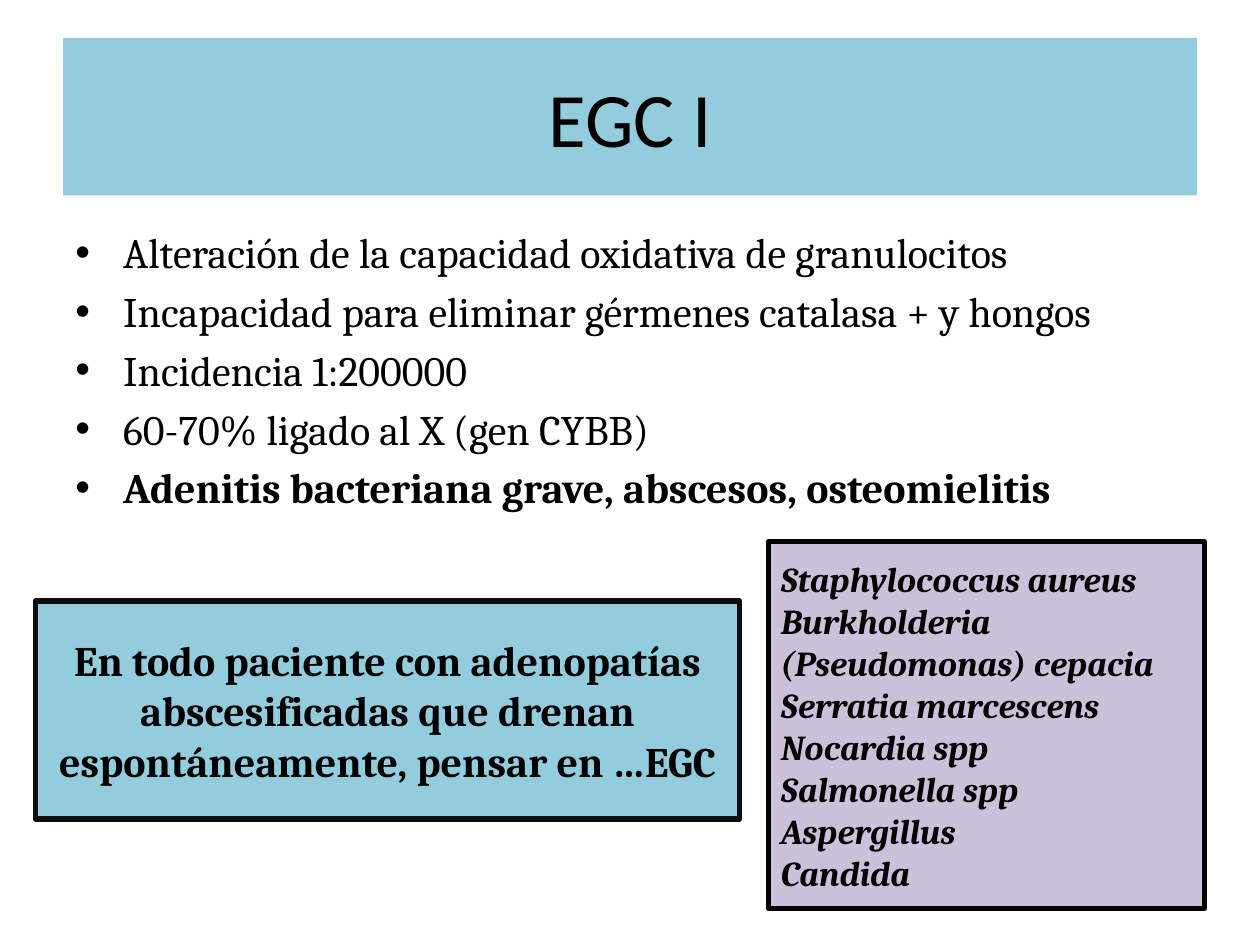
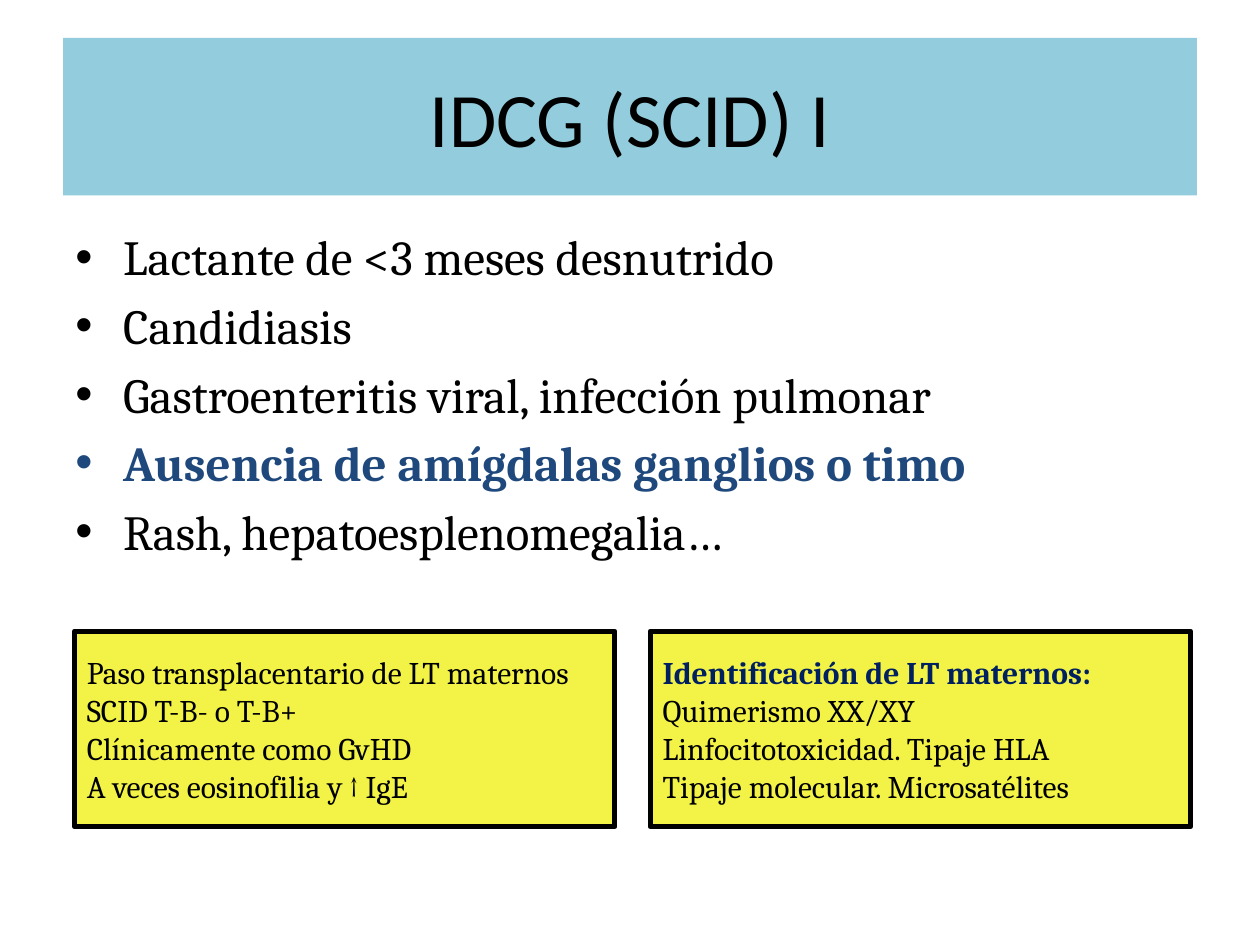
from lxml.etree import SubElement
from pptx import Presentation
from pptx.dml.color import RGBColor
from pptx.enum.shapes import MSO_SHAPE
from pptx.enum.text import MSO_ANCHOR, PP_ALIGN
from pptx.oxml.ns import qn
from pptx.util import Inches, Pt

COLORS = {
    "band": "93CDDD",
    "lilac": "CCC1DA",
    "yellow": "F3F347",
    "ink": "000000",
    "edge": "0D0D0D",
    "blue": "1F497D",
    "navy": "002060",
}
HEAD, BODY = "Calibri", "Cambria"


def rgb(name):
    return RGBColor.from_string(COLORS[name])


def paint(shape, fill):
    shape.fill.solid()
    shape.fill.fore_color.rgb = rgb(fill)


def place(shape, box):
    shape.left, shape.top, shape.width, shape.height = map(Inches, box)


def style(para, size, face=BODY, color="ink", bold=False, italic=False):
    for run in para.runs:
        font = run.font
        font.name, font.size = face, Pt(size)
        font.bold, font.italic = bold, italic
        font.color.rgb = rgb(color)


def write(frame, lines, size, align=PP_ALIGN.LEFT, marks=None, **look):
    """Fill a frame; marks maps a line's index to its special look."""
    frame.word_wrap = True
    frame.text = "\n".join(lines)
    for i, para in enumerate(frame.paragraphs):
        para.alignment = align
        style(para, size, **{**look, **(marks or {}).get(i, {})})


def add_slide(deck, title):
    slide = deck.slides.add_slide(deck.slide_layouts[5])
    head = slide.shapes.title
    place(head, (0.5, 0.3, 9, 1.25))
    paint(head, "band")
    write(head.text_frame, [title], 44, PP_ALIGN.CENTER, face=HEAD)
    head.text_frame.vertical_anchor = MSO_ANCHOR.MIDDLE
    return slide


def add_list(slide, lines, size, marks):
    box = slide.shapes.add_textbox(*map(Inches, (0.5, 1.75, 9, 4.95)))
    write(box.text_frame, lines, size, marks=marks)
    for para in box.text_frame.paragraphs:
        para.space_before = Pt(size * 0.2)
        # Hanging bullet
        props = para._p.get_or_add_pPr()
        props.set("marL", str(Inches(0.38)))
        props.set("indent", str(-Inches(0.38)))
        SubElement(props, qn("a:buFont"), typeface="Arial")
        SubElement(props, qn("a:buChar"), char="•")


def add_note(slide, box, fill, lines, size, edge="ink", **look):
    note = slide.shapes.add_shape(MSO_SHAPE.RECTANGLE, *map(Inches, box))
    note.shadow.inherit = False
    paint(note, fill)
    note.line.color.rgb = rgb(edge)
    note.line.width = Pt(3)
    write(note.text_frame, lines, size, **look)
    note.text_frame.vertical_anchor = MSO_ANCHOR.MIDDLE


def add_egc(deck):
    slide = add_slide(deck, "EGC I")
    add_list(slide, [
        "Alteración de la capacidad oxidativa de granulocitos",
        "Incapacidad para eliminar gérmenes catalasa + y hongos",
        "Incidencia 1:200000",
        "60-70% ligado al X (gen CYBB)",
        "Adenitis bacteriana grave, abscesos, osteomielitis",
    ], 24, {4: {"bold": True}})
    # Key message
    add_note(slide, (0.28, 4.77, 5.59, 1.73), "band", [
        "En todo paciente con adenopatías abscesificadas que drenan "
        "espontáneamente, pensar en …EGC",
    ], 24, edge="edge", align=PP_ALIGN.CENTER, bold=True)
    # Germs
    add_note(slide, (6.1, 4.3, 3.46, 2.91), "lilac", [
        "Staphylococcus aureus",
        "Burkholderia",
        "(Pseudomonas) cepacia",
        "Serratia marcescens",
        "Nocardia spp",
        "Salmonella spp",
        "Aspergillus",
        "Candida",
    ], 20, bold=True, italic=True)


def add_scid(deck):
    slide = add_slide(deck, "IDCG (SCID) I")
    add_list(slide, [
        "Lactante de <3 meses desnutrido",
        "Candidiasis",
        "Gastroenteritis viral, infección pulmonar",
        "Ausencia de amígdalas ganglios o timo",
        "Rash, hepatoesplenomegalia…",
    ], 28, {3: {"bold": True, "color": "blue"}})
    # Paired notes on maternal T cells
    notes = [
        (["Paso transplacentario de LT maternos",
          "SCID T-B- o T-B+",
          "Clínicamente como GvHD",
          "A veces eosinofilia y ↑ IgE"], {}),
        (["Identificación de LT maternos:",
          "Quimerismo XX/XY",
          "Linfocitotoxicidad. Tipaje HLA",
          "Tipaje molecular. Microsatélites"],
         {0: {"bold": True, "color": "navy"}}),
    ]
    for i, (lines, marks) in enumerate(notes):
        box = (0.59 + i * 4.57, 5.01, 4.29, 1.55)
        add_note(slide, box, "yellow", lines, 18, marks=marks)


def main():
    deck = Presentation()
    deck.slide_width, deck.slide_height = Inches(10), Inches(7.5)
    add_egc(deck)
    add_scid(deck)
    deck.save("out.pptx")


if __name__ == "__main__":
    main()
